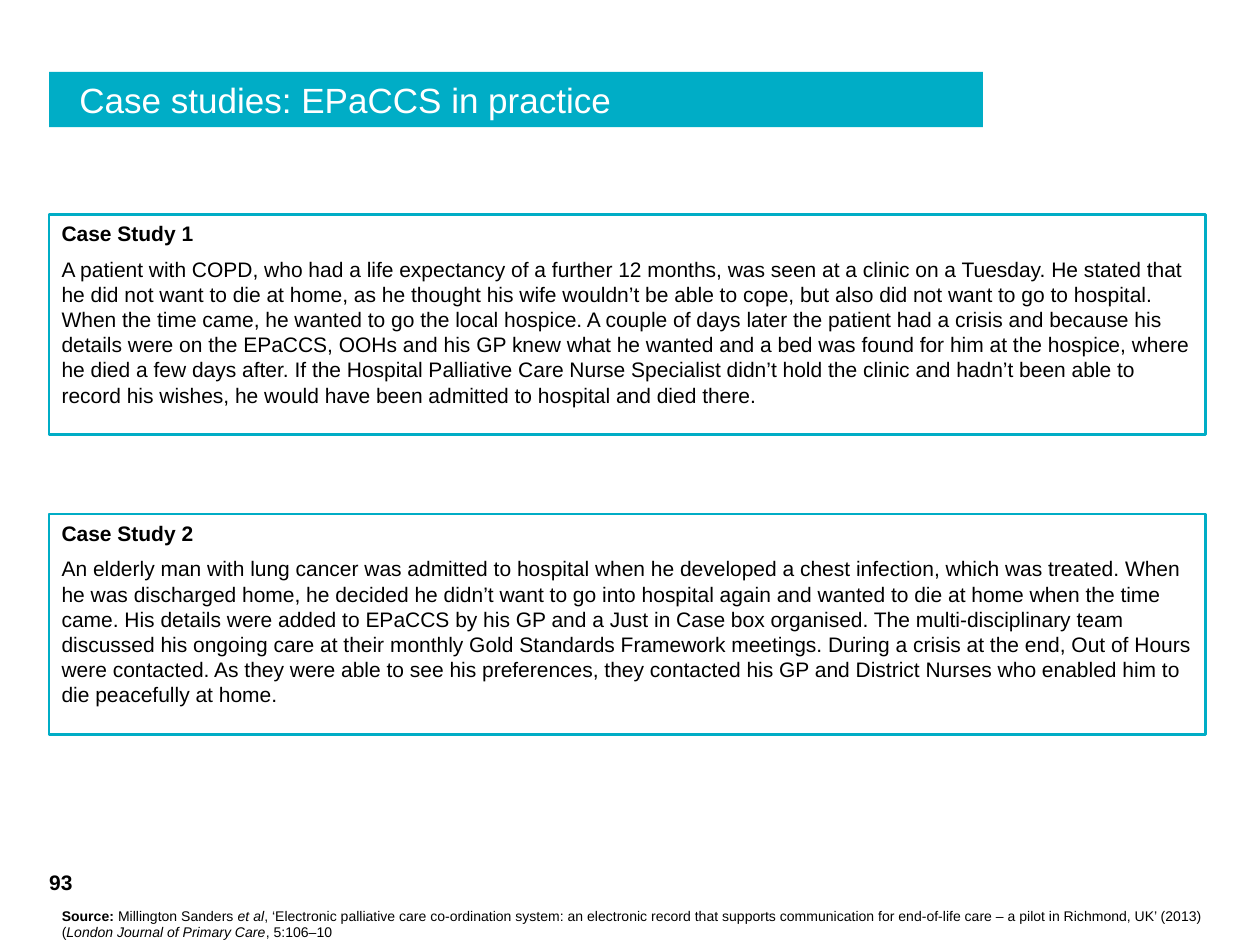
from pptx import Presentation
from pptx.dml.color import RGBColor
from pptx.enum import shapes, text as tx
from pptx.util import Inches, Pt

COLORS = {"teal": "00ADC6", "white": "FFFFFF", "black": "000000"}

# Content
TITLE = "Case studies: EPaCCS in practice"
CASES = [
    ("Case Study 1",
     "A patient with COPD, who had a life expectancy of a further 12 months, was seen at a "
     "clinic on a Tuesday. He stated that he did not want to die at home, as he thought his "
     "wife wouldn’t be able to cope, but also did not want to go to hospital. When the time "
     "came, he wanted to go the local hospice. A couple of days later the patient had a crisis "
     "and because his details were on the EPaCCS, OOHs and his GP knew what he wanted and a "
     "bed was found for him at the hospice, where he died a few days after. If the Hospital "
     "Palliative Care Nurse Specialist didn’t hold the clinic and hadn’t been able to record "
     "his wishes, he would have been admitted to hospital and died there."),
    ("Case Study 2",
     "An elderly man with lung cancer was admitted to hospital when he developed a chest "
     "infection, which was treated. When he was discharged home, he decided he didn’t want to "
     "go into hospital again and wanted to die at home when the time came. His details were "
     "added to EPaCCS by his GP and a Just in Case box organised. The multi-disciplinary team "
     "discussed his ongoing care at their monthly Gold Standards Framework meetings. During a "
     "crisis at the end, Out of Hours were contacted. As they were able to see his "
     "preferences, they contacted his GP and District Nurses who enabled him to die "
     "peacefully at home."),
]
PAGE = "93"
SOURCE = [
    ("Source:", "b"),
    (" Millington Sanders ", ""),
    ("et al", "i"),
    (", ‘Electronic palliative care co-ordination system: an electronic record that supports "
     "communication for end-of-life care – a pilot in Richmond, UK’ (2013) (", ""),
    ("London Journal of Primary Care", "i"),
    (", 5:106–10", ""),
]

# Layout in inches
LEFT, WIDTH = 0.39, 9.18
CASE_TOP, CASE_HIGH, CASE_STEP = 1.7, 1.75, 2.38


def color(name):
    return RGBColor.from_string(COLORS[name])


def write(shape, paras, size=12, ink="black", inset=(0.1, 0.05, 0.1, 0.05),
          anchor=tx.MSO_ANCHOR.TOP, after=0):
    """Fill a shape with paragraphs, each a list of (text, style) runs."""
    frame = shape.text_frame
    frame.word_wrap = True
    frame.auto_size = tx.MSO_AUTO_SIZE.NONE
    frame.vertical_anchor = anchor
    (frame.margin_left, frame.margin_top,
     frame.margin_right, frame.margin_bottom) = map(Inches, inset)
    for i, runs in enumerate(paras):
        para = frame.paragraphs[0] if i == 0 else frame.add_paragraph()
        para.alignment = tx.PP_ALIGN.LEFT
        para.space_before, para.space_after = Pt(0), Pt(after)
        for words, style in runs:
            run = para.add_run()
            run.text = words
            font = run.font
            font.name, font.size = "Arial", Pt(size)
            font.bold, font.italic = "b" in style, "i" in style
            font.color.rgb = color(ink)


deck = Presentation()
deck.slide_width, deck.slide_height = Inches(10), Inches(7.5)
slide = deck.slides.add_slide(deck.slide_layouts[5])

# Title bar
title = slide.shapes.title
title.left, title.top = Inches(LEFT), Inches(0.57)
title.width, title.height = Inches(7.41), Inches(0.44)
title.fill.solid()
title.fill.fore_color.rgb = color("teal")
write(title, [[(TITLE, "")]], size=20, ink="white", inset=(0.24, 0, 0, 0),
      anchor=tx.MSO_ANCHOR.MIDDLE)

# Case study boxes
for i, (head, story) in enumerate(CASES):
    box = slide.shapes.add_shape(
        shapes.MSO_SHAPE.RECTANGLE, Inches(LEFT), Inches(CASE_TOP + i * CASE_STEP),
        Inches(WIDTH), Inches(CASE_HIGH))
    box.shadow.inherit = False
    box.fill.background()
    box.line.color.rgb = color("teal")
    box.line.width = Pt(1.5)
    write(box, [[(head, "b")], [(story, "")]], after=6)

# Page number
page = slide.shapes.add_textbox(Inches(LEFT), Inches(6.9), Inches(0.33), Inches(0.2))
write(page, [[(PAGE, "b")]], inset=(0, 0, 0, 0), anchor=tx.MSO_ANCHOR.BOTTOM)

# Source note
note = slide.shapes.add_textbox(Inches(0.49), Inches(7.15), Inches(WIDTH), Inches(0.37))
write(note, [SOURCE], size=8, inset=(0, 0.05, 0.1, 0.05))

deck.save("out.pptx")
